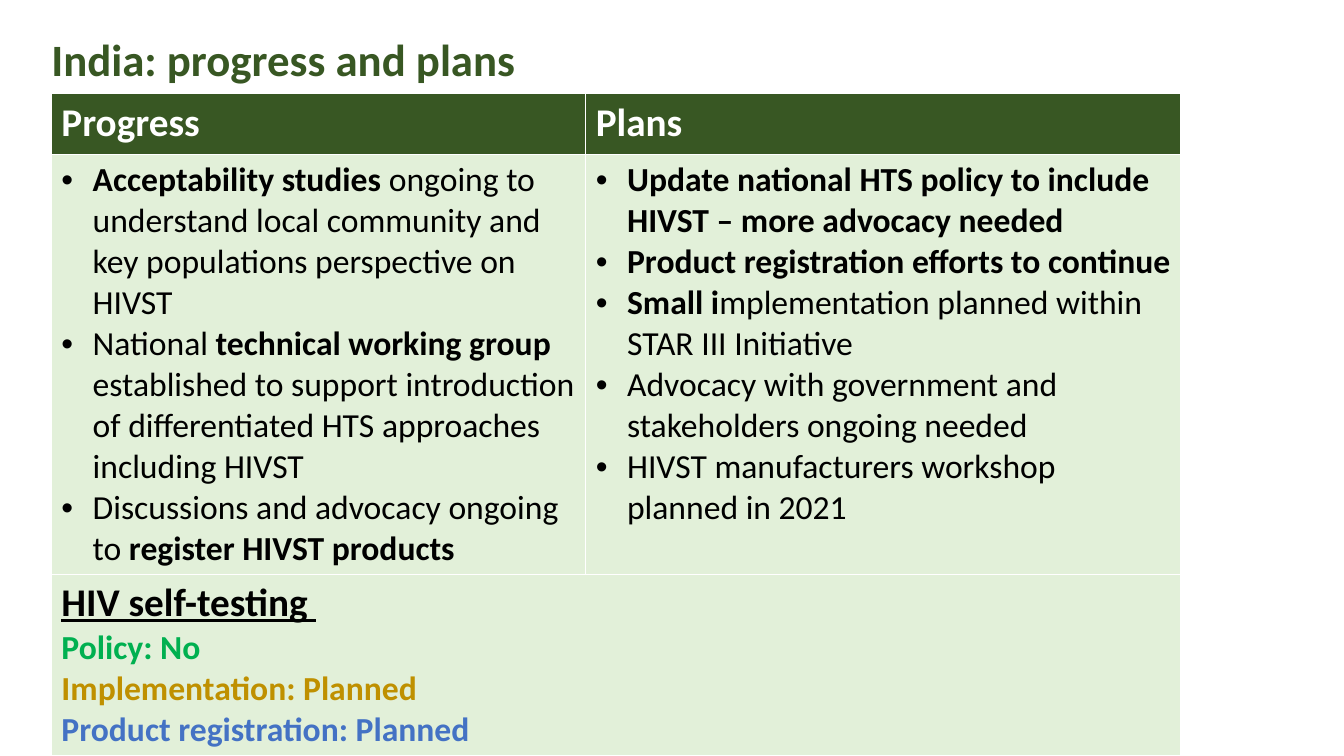
from lxml import etree
from pptx import Presentation
from pptx import util as u
from pptx.dml.color import RGBColor
from pptx.enum import text
from pptx.oxml import ns

PX = u.Inches(1) // 100
FONT = "Calibri"
HUES = {
    "dark": "385723", "pale": "E2F0D9", "white": "FFFFFF", "black": "000000",
    "green": "00B050", "gold": "BF9000", "blue": "4472C4",
}
HEADS = ["Progress", "Plans"]
LISTS = [
    [
        [("Acceptability studies ", True),
         ("ongoing to understand local community and key populations "
          "perspective on HIVST", False)],
        [("National ", False), ("technical working group ", True),
         ("established to support introduction of differentiated HTS "
          "approaches including HIVST", False)],
        [("Discussions and advocacy ongoing to ", False),
         ("register HIVST products", True)],
    ],
    [
        [("Update national HTS policy to include HIVST – more advocacy needed",
          True)],
        [("Product registration efforts to continue", True)],
        [("Small i", True),
         ("mplementation planned within STAR III Initiative", False)],
        [("Advocacy with government and stakeholders ongoing needed", False)],
        [("HIVST manufacturers workshop planned in 2021", False)],
    ],
]
STATUS = [
    ("HIV self-testing ", 28, "black", True),
    ("Policy: No", 24, "green", False),
    ("Implementation: Planned", 24, "gold", False),
    ("Product registration: Planned", 24, "blue", False),
]


def hue(name):
    """Return the named colour."""
    return RGBColor.from_string(HUES[name])


def style(para, size, tint, bold=None):
    """Set the font of a whole paragraph."""
    font = para.font
    font.name, font.size, font.bold = FONT, u.Pt(size), bold
    font.color.rgb = hue(tint)


def paint(cell, tint):
    """Fill a table cell with one colour."""
    cell.fill.solid()
    cell.fill.fore_color.rgb = hue(tint)


def lines(frame, count):
    """Return the given number of paragraphs in a frame."""
    for _ in range(count - 1):
        frame.add_paragraph()
    return frame.paragraphs


def bullet(para, indent):
    """Give a paragraph a hanging round bullet."""
    props = para._p.get_or_add_pPr()
    props.set("marL", str(indent * PX))
    props.set("indent", str(-indent * PX))
    etree.SubElement(props, ns.qn("a:buFont")).set("typeface", "Arial")
    etree.SubElement(props, ns.qn("a:buChar")).set("char", "•")


def title(slide, x, y, w, h):
    """Place the slide title in its box."""
    head = slide.shapes.title
    head.left, head.top, head.width, head.height = (
        n * PX for n in (x, y, w, h))
    frame = head.text_frame
    frame.text = "India: progress and plans"
    frame.auto_size = text.MSO_AUTO_SIZE.NONE
    frame.vertical_anchor = text.MSO_ANCHOR.MIDDLE
    para = frame.paragraphs[0]
    para.alignment, para.line_spacing = text.PP_ALIGN.LEFT, 0.9
    style(para, 32, "dark", True)


def points(cell, items):
    """Write a bulleted list with bold phrases into a cell."""
    for para, parts in zip(lines(cell.text_frame, len(items)), items):
        bullet(para, 31)
        style(para, 24, "black")
        for words, bold in parts:
            run = para.add_run()
            run.text, run.font.bold = words, bold


def status(cell):
    """Write the self-testing summary into a cell."""
    paras = lines(cell.text_frame, len(STATUS))
    for para, (words, size, tint, under) in zip(paras, STATUS):
        para.text = words
        style(para, size, tint, True)
        para.font.underline = under


def grid(slide, x, y, cols, rows):
    """Place the progress and plans table at a corner."""
    box = [n * PX for n in (x, y, sum(cols), sum(rows))]
    table = slide.shapes.add_table(len(rows), len(cols), *box).table
    table.horz_banding = False
    for col, width in zip(table.columns, cols):
        col.width = width * PX
    for row, height in zip(table.rows, rows):
        row.height = height * PX
    for i, (head, items) in enumerate(zip(HEADS, LISTS)):
        top = table.cell(0, i)
        top.text = head
        style(top.text_frame.paragraphs[0], 28, "white", True)
        points(table.cell(1, i), items)
        for j, tint in enumerate(("dark", "pale", "pale")):
            paint(table.cell(j, i), tint)
    foot = table.cell(2, 0)
    foot.merge(table.cell(2, 1))
    status(foot)


def main():
    """Build and save the slide."""
    deck = Presentation()
    deck.slide_width, deck.slide_height = 1333 * PX, 750 * PX
    slide = deck.slides.add_slide(deck.slide_layouts[5])
    title(slide, 41, 23, 1150, 77)
    grid(slide, 51, 93, (530, 590), (60, 371, 110))
    deck.save("out.pptx")


if __name__ == "__main__":
    main()
